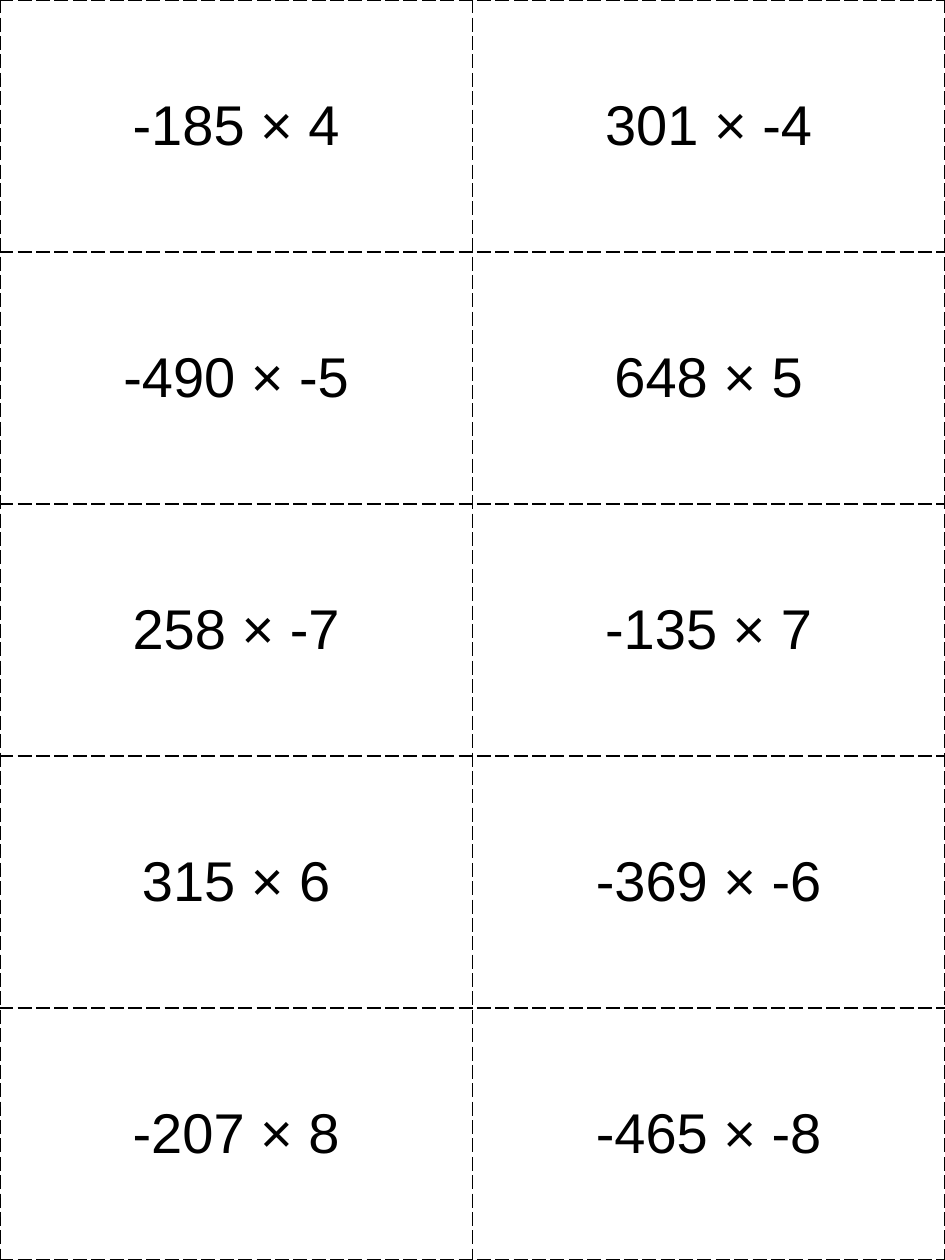
from lxml.etree import SubElement
from pptx import Presentation
from pptx.dml.color import RGBColor
from pptx.enum.text import MSO_ANCHOR, PP_ALIGN
from pptx.oxml.ns import qn
from pptx.util import Inches, Pt

PROBLEMS = [
    ("-185 × 4", "301 × -4"),
    ("-490 × -5", "648 × 5"),
    ("258 × -7", "-135 × 7"),
    ("315 × 6", "-369 × -6"),
    ("-207 × 8", "-465 × -8"),
]
BLACK = "000000"


def write(cell, text, font="Arial", size=32, color=BLACK):
    cell.vertical_anchor = MSO_ANCHOR.MIDDLE
    p = cell.text_frame.paragraphs[0]
    p.alignment = PP_ALIGN.CENTER
    r = p.add_run()
    r.text = text
    r.font.name, r.font.size = font, Pt(size)
    r.font.color.rgb = RGBColor.from_string(color)


def add_borders(cell, color=BLACK, width=1, dash="lgDash"):
    tc_pr = cell._tc.get_or_add_tcPr()
    for side in ("lnL", "lnR", "lnT", "lnB"):
        ln = SubElement(tc_pr, qn(f"a:{side}"), w=str(Pt(width)))
        fill = SubElement(ln, qn("a:solidFill"))
        SubElement(fill, qn("a:srgbClr"), val=color)
        SubElement(ln, qn("a:prstDash"), val=dash)


prs = Presentation()
prs.slide_width, prs.slide_height = Inches(7.5), Inches(10)
s = prs.slides.add_slide(prs.slide_layouts[6])

cards = s.shapes.add_table(
    len(PROBLEMS), len(PROBLEMS[0]), 0, 0, prs.slide_width, prs.slide_height
).table
cards.first_row = cards.horz_banding = False

for row, problems in enumerate(PROBLEMS):
    for col, problem in enumerate(problems):
        cell = cards.cell(row, col)
        write(cell, problem)
        add_borders(cell)  # borders must precede the fill in the cell's XML
        cell.fill.background()

prs.save("out.pptx")
